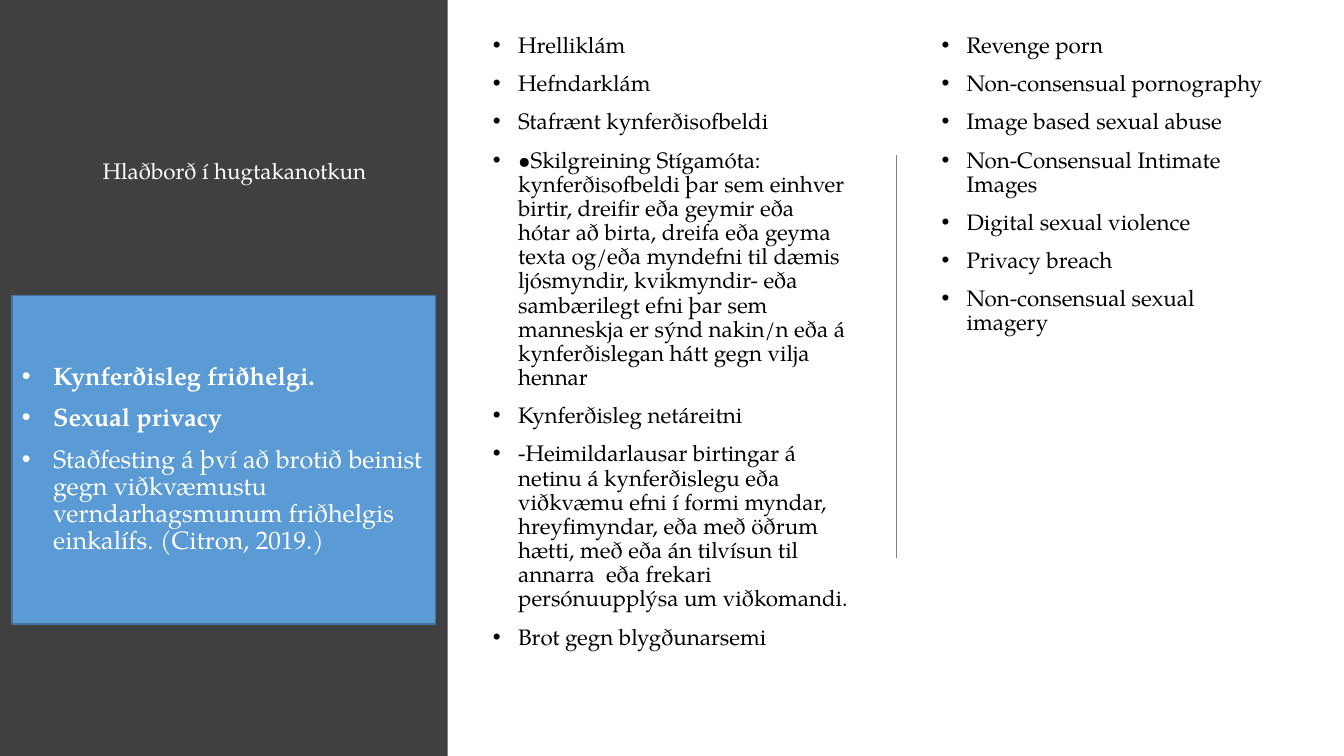
from lxml import etree
from pptx import Presentation
from pptx.dml.color import RGBColor
from pptx.enum.shapes import MSO_CONNECTOR as Connector, MSO_SHAPE as Shape
from pptx.enum.text import MSO_ANCHOR as Anchor, PP_ALIGN as Align
from pptx.oxml.ns import qn
from pptx.util import Inches, Pt

FONT = "TeX Gyre Pagella"
WHITE, BLACK = "FFFFFF", "000000"

ICELANDIC_TERMS = [
    "Hrelliklám",
    "Hefndarklám",
    "Stafrænt kynferðisofbeldi",
    "•Skilgreining Stígamóta:  kynferðisofbeldi þar sem einhver birtir, dreifir "
    "eða geymir eða hótar að birta, dreifa eða geyma texta og/eða myndefni til "
    "dæmis ljósmyndir, kvikmyndir- eða sambærilegt efni þar sem manneskja er sýnd "
    "nakin/n eða á kynferðislegan hátt gegn vilja hennar",
    "Kynferðisleg netáreitni",
    "-Heimildarlausar birtingar á netinu á kynferðislegu eða viðkvæmu efni í formi "
    "myndar, hreyfimyndar, eða með öðrum hætti, með eða án tilvísun til annarra  "
    "eða frekari persónuupplýsa um viðkomandi. ",
    "Brot gegn blygðunarsemi",
]
ENGLISH_TERMS = [
    "Revenge porn",
    "Non-consensual pornography",
    "Image based sexual abuse",
    "Non-Consensual Intimate Images ",
    "Digital sexual violence",
    "Privacy breach",
    "Non-consensual sexual imagery",
]
PRIVACY_HEADINGS = ["Kynferðisleg friðhelgi. ", "Sexual privacy "]
PRIVACY_NOTE = (
    "Staðfesting á því að brotið beinist gegn viðkvæmustu verndarhagsmunum "
    "friðhelgis einkalífs. (Citron, 2019.) "
)


def color(value):
    return RGBColor.from_string(value)


def add_panel(page, left, top, width, height, fill, line=None):
    panel = page.shapes.add_shape(
        Shape.RECTANGLE, Inches(left), Inches(top), Inches(width), Inches(height))
    panel.shadow.inherit = False
    panel.fill.solid()
    panel.fill.fore_color.rgb = color(fill)
    if line:
        panel.line.color.rgb = color(line)
        panel.line.width = Pt(1)
    else:
        panel.line.fill.background()
    return panel


def add_text_box(page, left, top, width, height):
    return page.shapes.add_textbox(
        Inches(left), Inches(top), Inches(width), Inches(height))


def set_bullet(para, indent):
    properties = para._p.get_or_add_pPr()
    properties.set("marL", str(Inches(indent)))
    properties.set("indent", str(-Inches(indent)))
    font = etree.SubElement(properties, qn("a:buFont"))
    font.set("typeface", "Arial")
    etree.SubElement(properties, qn("a:buChar")).set("char", "•")


def write_paragraphs(box, items, size, ink, indent=0):
    """Fill a box with (text, bold) items, bulleted when an indent is given."""
    frame = box.text_frame
    frame.word_wrap = True
    for index, (text, bold) in enumerate(items):
        para = frame.add_paragraph() if index else frame.paragraphs[0]
        para.alignment = Align.LEFT
        para.line_spacing = 0.9
        if index:
            para.space_before = Pt(10)
        if indent:
            set_bullet(para, indent)
        span = para.add_run()
        span.text = text
        span.font.name = FONT
        span.font.size = Pt(size)
        span.font.bold = bold
        span.font.color.rgb = color(ink)


def add_term_list(page, left, top, width, height, terms):
    box = add_text_box(page, left, top, width, height)
    write_paragraphs(box, [(term, False) for term in terms], 16, BLACK, 0.25)


def add_divider(page, x, top, bottom):
    divider = page.shapes.add_connector(
        Connector.STRAIGHT, Inches(x), Inches(top), Inches(x), Inches(bottom))
    divider.line.color.rgb = color("808080")
    divider.line.width = Pt(1)
    etree.SubElement(divider._element.spPr, qn("a:effectLst"))


def main():
    deck = Presentation()
    deck.slide_width, deck.slide_height = Inches(13.33), Inches(7.5)
    page = deck.slides.add_slide(deck.slide_layouts[6])

    add_panel(page, 0, 0, 4.44, 7.5, "404040")
    title = add_text_box(page, 0.92, 1.54, 3.17, 4.77)
    write_paragraphs(title, [("Hlaðborð í hugtakanotkun", False)], 16, WHITE)

    add_term_list(page, 4.79, 0.29, 3.75, 6.98, ICELANDIC_TERMS)
    add_term_list(page, 9.24, 0.29, 3.5, 7.05, ENGLISH_TERMS)
    add_divider(page, 8.89, 1.54, 5.54)

    privacy = add_panel(page, 0.12, 2.93, 4.2, 3.26, "5B9BD5", "43739E")
    privacy.text_frame.vertical_anchor = Anchor.MIDDLE
    items = [(heading, True) for heading in PRIVACY_HEADINGS]
    write_paragraphs(privacy, items + [(PRIVACY_NOTE, False)], 18, WHITE, 0.31)

    deck.save("out.pptx")


if __name__ == "__main__":
    main()
